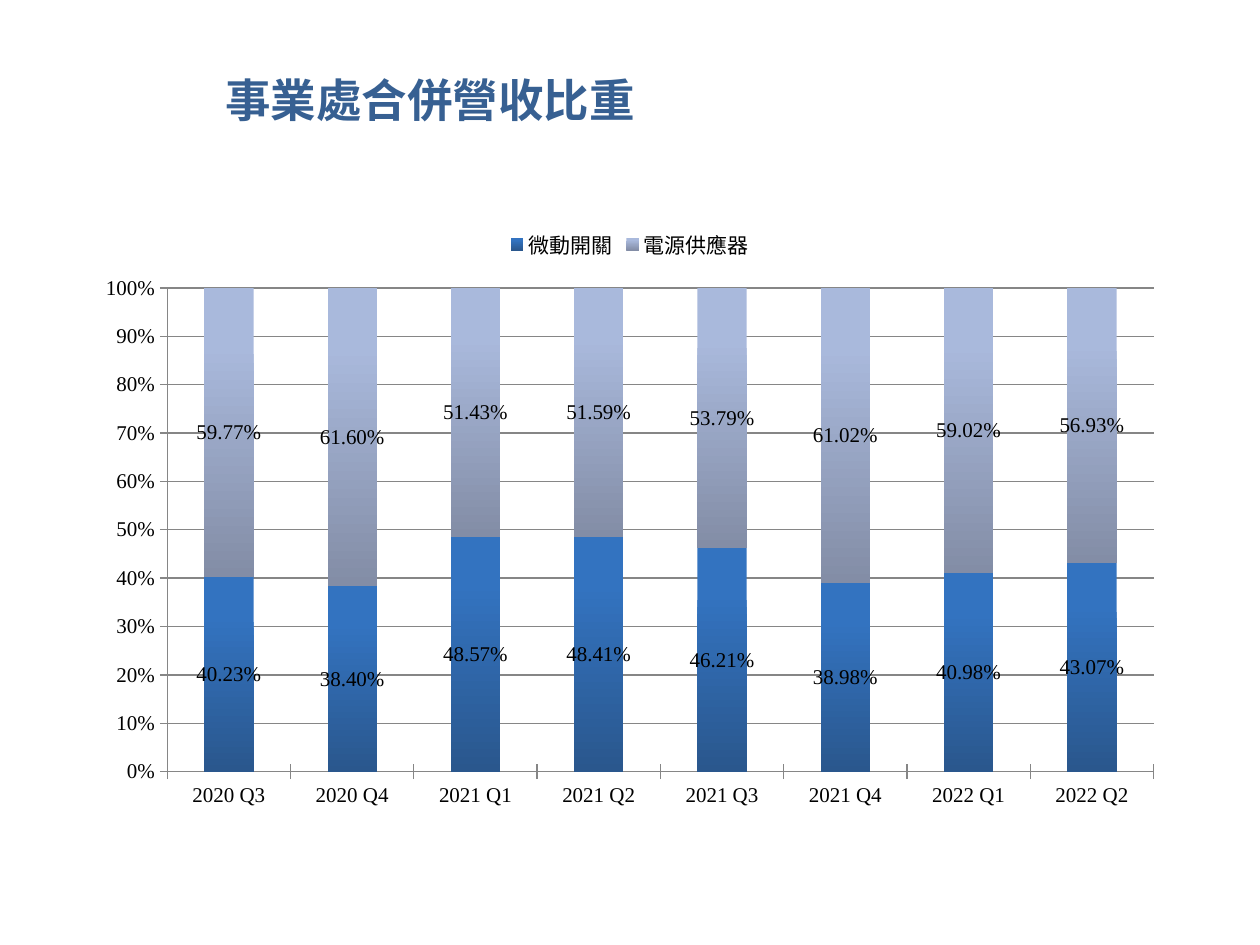
from collections import namedtuple
from dataclasses import dataclass

from lxml import etree
from pptx import Presentation
from pptx.chart.data import CategoryChartData
from pptx.dml.color import RGBColor
from pptx.enum.chart import XL_CHART_TYPE as ChartType
from pptx.enum.chart import XL_LABEL_POSITION as LabelPos
from pptx.enum.chart import XL_LEGEND_POSITION as LegendPos
from pptx.enum.chart import XL_TICK_MARK as TickMark
from pptx.enum.text import MSO_ANCHOR as Anchor
from pptx.enum.text import MSO_AUTO_SIZE as AutoSize
from pptx.oxml import parse_xml
from pptx.oxml.ns import nsdecls, qn
from pptx.util import Pt

Box = namedtuple("Box", "left top width height")


@dataclass(frozen=True)
class Theme:
    title: str = "376092"
    text: str = "000000"
    grid: str = "868686"
    bars: tuple = (("3373C0", "2A578D"), ("A9B9DC", "838DA6"))
    latin: str = "Times New Roman"
    cjk: str = "Noto Sans CJK SC"
    base: str = "Calibri"
    title_size: int = 26
    label_size: int = 12
    base_size: int = 10


THEME = Theme()
QUARTERS = ["2020 Q3", "2020 Q4", "2021 Q1", "2021 Q2",
            "2021 Q3", "2021 Q4", "2022 Q1", "2022 Q2"]
SHARES = {
    "微動開關": [0.4023, 0.384, 0.4857, 0.4841, 0.4621, 0.3898, 0.4098, 0.4307],
    "電源供應器": [0.5977, 0.616, 0.5143, 0.5159, 0.5379, 0.6102, 0.5902, 0.5693],
}


def rgb(value):
    return RGBColor.from_string(value)


def set_font(font, name, size, color=THEME.text):
    font.name = name
    font.size = Pt(size)
    font.color.rgb = rgb(color)


def set_east_asian(element):
    for latin in list(element.iter(qn("a:latin"))):
        ea = etree.Element(qn("a:ea"), typeface=THEME.cjk)
        latin.addnext(ea)


def add_title(slide, box, text):
    tf = slide.shapes.add_textbox(*map(Pt, box)).text_frame
    tf.word_wrap = True
    tf.auto_size = AutoSize.SHAPE_TO_FIT_TEXT
    tf.vertical_anchor = Anchor.MIDDLE
    r = tf.paragraphs[0].add_run()
    r.text = text
    r.font.bold = True
    set_font(r.font, THEME.latin, THEME.title_size, THEME.title)
    set_east_asian(r._r)


def style_axis(axis):
    axis.major_tick_mark = TickMark.CROSS
    axis.minor_tick_mark = TickMark.NONE
    axis.format.line.color.rgb = rgb(THEME.grid)
    axis.format.line.width = Pt(0.75)
    set_font(axis.tick_labels.font, THEME.latin, THEME.label_size)


def style_series(series, colors):
    fill = series.format.fill
    fill.gradient()
    fill.gradient_angle = 270
    for stop, color, position in zip(fill.gradient_stops, colors, (0.2, 1)):
        stop.color.rgb = rgb(color)
        stop.position = position
    labels = series.data_labels
    labels.show_value = True
    labels.number_format = "0.00%"
    labels.number_format_is_linked = False
    labels.position = LabelPos.CENTER
    set_font(labels.font, THEME.latin, THEME.label_size)


def place_plot(chart, x, y, w, h):
    area = chart._chartSpace.chart.plotArea
    for old in area.findall(qn("c:layout")):
        area.remove(old)
    area.insert(0, parse_xml(
        f'<c:layout {nsdecls("c")}><c:manualLayout>'
        '<c:layoutTarget val="inner"/><c:xMode val="edge"/><c:yMode val="edge"/>'
        f'<c:x val="{x}"/><c:y val="{y}"/><c:w val="{w}"/><c:h val="{h}"/>'
        '</c:manualLayout></c:layout>'))


def add_share_chart(slide, box):
    data = CategoryChartData(number_format="0.00%")
    data.categories = QUARTERS
    for name, values in SHARES.items():
        data.add_series(name, values)
    chart = slide.shapes.add_chart(
        ChartType.COLUMN_STACKED, *map(Pt, box), data).chart
    chart.has_title = False
    set_font(chart.font, THEME.base, THEME.base_size)

    plot = chart.plots[0]
    plot.gap_width = 150
    plot.overlap = 100
    plot.vary_by_categories = False
    for series, colors in zip(plot.series, THEME.bars):
        style_series(series, colors)

    style_axis(chart.category_axis)
    axis = chart.value_axis
    style_axis(axis)
    axis.minimum_scale = 0
    axis.maximum_scale = 1
    axis.major_unit = 0.1
    axis.tick_labels.number_format = "0%"
    axis.tick_labels.number_format_is_linked = False
    axis.has_major_gridlines = True
    axis.major_gridlines.format.line.color.rgb = rgb(THEME.grid)
    axis.major_gridlines.format.line.width = Pt(0.75)

    chart.has_legend = True
    legend = chart.legend
    legend.position = LegendPos.TOP
    legend.include_in_layout = False
    set_font(legend.font, THEME.cjk, THEME.label_size)
    set_east_asian(legend._element)
    place_plot(chart, 0.076, 0.122, 0.904, 0.8)


def main():
    prs = Presentation()
    prs.slide_width, prs.slide_height = Pt(720), Pt(540)
    slide = prs.slides.add_slide(prs.slide_layouts[6])
    add_title(slide, Box(121.7, 37.4, 544.3, 38.9), "事業處合併營收比重")
    add_share_chart(slide, Box(48.2, 122.4, 623.5, 345.6))
    prs.save("out.pptx")


if __name__ == "__main__":
    main()
